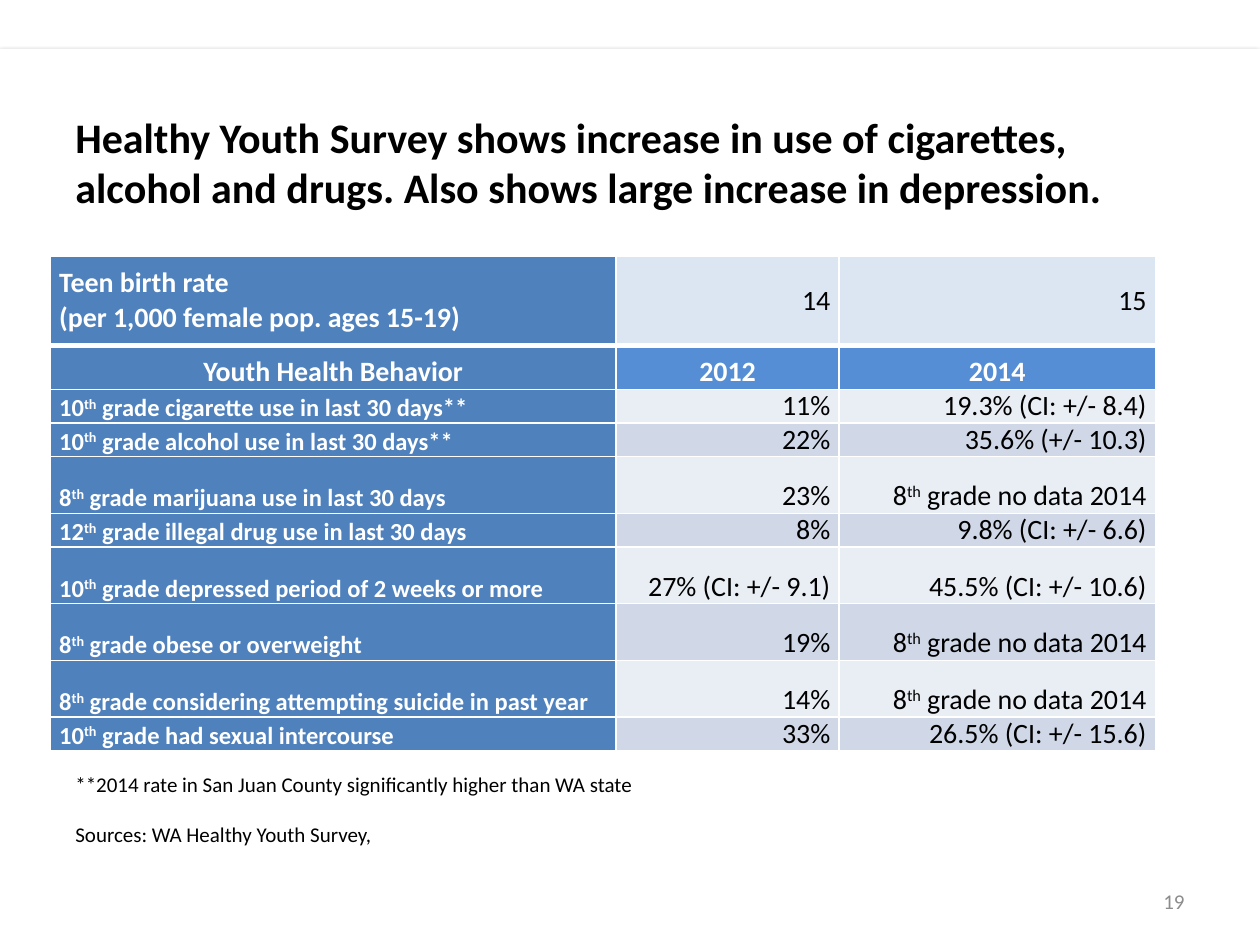
from dataclasses import dataclass

from lxml import etree
from pptx import Presentation
from pptx.dml.color import RGBColor
from pptx.enum.shapes import MSO_SHAPE
from pptx.enum.text import MSO_ANCHOR, PP_ALIGN
from pptx.oxml.ns import qn
from pptx.util import Inches, Pt

LEFT, CENTER, RIGHT = PP_ALIGN.LEFT, PP_ALIGN.CENTER, PP_ALIGN.RIGHT
TOP, MIDDLE, BOTTOM = MSO_ANCHOR.TOP, MSO_ANCHOR.MIDDLE, MSO_ANCHOR.BOTTOM
RECTANGLE = MSO_SHAPE.RECTANGLE


@dataclass(frozen=True)
class Theme:
    font: str = "Calibri"
    white: str = "FFFFFF"
    black: str = "000000"
    grey: str = "8C8C8C"
    label_fill: str = "4F81BD"
    year_fill: str = "558ED5"
    birth_fill: str = "DCE6F2"
    band_fills: tuple[str, str] = ("E9EDF4", "D0D8E8")
    title_size: int = 24
    value_size: int = 16
    label_size: int = 14
    note_size: int = 12


@dataclass(frozen=True)
class Behavior:
    label: str
    rate_2012: str
    rate_2014: str
    height: float


THEME = Theme()
SHORT, TALL = 0.22, 0.45
NO_DATA = "8^th^ grade no data 2014"
BEHAVIORS = [
    Behavior("10^th^ grade cigarette use in last 30 days**", "11%", "19.3% (CI: +/- 8.4)", SHORT),
    Behavior("10^th^ grade alcohol use in last 30 days**", "22%", "35.6% (+/- 10.3)", SHORT),
    Behavior("8^th^ grade marijuana use in last 30 days", "23%", NO_DATA, TALL),
    Behavior("12^th^ grade illegal drug use in last 30 days", "8%", "9.8% (CI: +/- 6.6)", SHORT),
    Behavior("10^th^ grade depressed period of 2 weeks or more",
             "27% (CI: +/- 9.1)", "45.5% (CI: +/- 10.6)", TALL),
    Behavior("8^th^ grade obese or overweight", "19%", NO_DATA, TALL),
    Behavior("8^th^ grade considering attempting suicide in past year", "14%", NO_DATA, TALL),
    Behavior("10^th^ grade had sexual intercourse", "33%", "26.5% (CI: +/- 15.6)", SHORT),
]
COLUMN_WIDTHS = (4.49, 1.77, 2.51)
BIRTH_HEIGHT, HEADER_HEIGHT = 0.71, 0.35


def write_text(frame, text: str, *, size: int, color: str = THEME.black, bold: bool = False,
               align=LEFT, gap: float = 0) -> None:
    """Write one paragraph per line; text between carets is superscript."""
    for index, line in enumerate(text.split("\n")):
        paragraph = frame.paragraphs[0] if index == 0 else frame.add_paragraph()
        paragraph.alignment = align
        if index and gap:
            paragraph.space_before = Pt(gap)
        for part_index, part in enumerate(line.split("^")):
            run = paragraph.add_run()
            run.text = part
            run.font.name = THEME.font
            run.font.size = Pt(size)
            run.font.bold = bold
            run.font.color.rgb = RGBColor.from_string(color)
            if part_index % 2:
                run._r.get_or_add_rPr().set("baseline", "30000")


def add_text(slide, text: str, left: float, top: float, width: float, height: float,
             *, anchor=MIDDLE, **text_format) -> None:
    box = slide.shapes.add_textbox(Inches(left), Inches(top), Inches(width), Inches(height))
    box.text_frame.word_wrap = True
    box.text_frame.vertical_anchor = anchor
    write_text(box.text_frame, text, **text_format)


def add_panel(slide) -> None:
    """Draw the white page panel with a soft shadow along its top edge."""
    panel = slide.shapes.add_shape(RECTANGLE, 0, Inches(0.39), Inches(10), Inches(7.11))
    panel.fill.solid()
    panel.fill.fore_color.rgb = RGBColor.from_string(THEME.white)
    panel.line.fill.background()
    panel.shadow.inherit = False
    effects = panel._element.spPr.find(qn("a:effectLst"))
    shadow = etree.SubElement(effects, qn("a:outerShdw"), blurRad=str(Pt(3.1)),
                              dist=str(Pt(1.8)), dir="5400000", rotWithShape="0")
    color = etree.SubElement(shadow, qn("a:srgbClr"), val=THEME.black)
    etree.SubElement(color, qn("a:alpha"), val="35000")


def set_borders(cell, bottom: float = 1, top: float = 1) -> None:
    properties = cell._tc.get_or_add_tcPr()
    widths = {"a:lnL": 1, "a:lnR": 1, "a:lnT": top, "a:lnB": bottom}
    for position, (tag, width) in enumerate(widths.items()):
        line = etree.Element(qn(tag), w=str(Pt(width)))
        fill = etree.SubElement(line, qn("a:solidFill"))
        etree.SubElement(fill, qn("a:srgbClr"), val=THEME.white)
        properties.insert(position, line)


def fill_cell(cell, text: str, fill: str, *, anchor=BOTTOM, bottom: float = 1,
              top: float = 1, **text_format) -> None:
    cell.margin_left = cell.margin_right = Inches(0.07)
    cell.margin_top = cell.margin_bottom = 0
    cell.vertical_anchor = anchor
    cell.fill.solid()
    cell.fill.fore_color.rgb = RGBColor.from_string(fill)
    set_borders(cell, bottom, top)
    write_text(cell.text_frame, text, **text_format)


def add_survey_table(slide) -> None:
    heights = [BIRTH_HEIGHT, HEADER_HEIGHT] + [behavior.height for behavior in BEHAVIORS]
    table = slide.shapes.add_table(len(heights), len(COLUMN_WIDTHS), Inches(0.4), Inches(2.03),
                                   Inches(sum(COLUMN_WIDTHS)), Inches(sum(heights))).table
    for column, width in zip(table.columns, COLUMN_WIDTHS):
        column.width = Inches(width)
    for row, height in zip(table.rows, heights):
        row.height = Inches(height)

    heading = {"size": THEME.value_size, "color": THEME.white, "bold": True}
    label = heading | {"size": THEME.label_size}
    value = {"size": THEME.value_size, "align": RIGHT}

    birth = {"anchor": MIDDLE, "bottom": 3}
    fill_cell(table.cell(0, 0), "Teen birth rate\n(per 1,000 female pop. ages 15-19)",
              THEME.label_fill, **birth, **heading)
    for column, rate in enumerate(("14", "15"), start=1):
        fill_cell(table.cell(0, column), rate, THEME.birth_fill, **birth, **value)

    for column, text in enumerate(("Youth Health Behavior", "2012", "2014")):
        fill = THEME.year_fill if column else THEME.label_fill
        fill_cell(table.cell(1, column), text, fill, top=3, align=CENTER, **heading)

    for index, behavior in enumerate(BEHAVIORS):
        row = index + 2
        band = THEME.band_fills[index % 2]
        fill_cell(table.cell(row, 0), behavior.label, THEME.label_fill, **label)
        fill_cell(table.cell(row, 1), behavior.rate_2012, band, **value)
        fill_cell(table.cell(row, 2), behavior.rate_2014, band, **value)


def main() -> None:
    presentation = Presentation()
    presentation.slide_width, presentation.slide_height = Inches(10), Inches(7.5)
    slide = presentation.slides.add_slide(presentation.slide_layouts[6])
    add_panel(slide)
    add_text(slide, "Healthy Youth Survey shows increase in use of cigarettes, alcohol and drugs. "
             "Also shows large increase in depression.",
             0.5, 0.66, 9, 1.25, size=THEME.title_size, bold=True)
    add_survey_table(slide)
    add_text(slide, "19", 7.17, 6.95, 2.33, 0.4,
             size=THEME.note_size, color=THEME.grey, align=RIGHT)
    add_text(slide, "**2014 rate in San Juan County significantly higher than WA state\n"
             "Sources: WA Healthy Youth Survey,",
             0.5, 6.07, 5, 0.71, anchor=TOP, size=THEME.note_size, gap=14.6)
    presentation.save("out.pptx")


if __name__ == "__main__":
    main()
